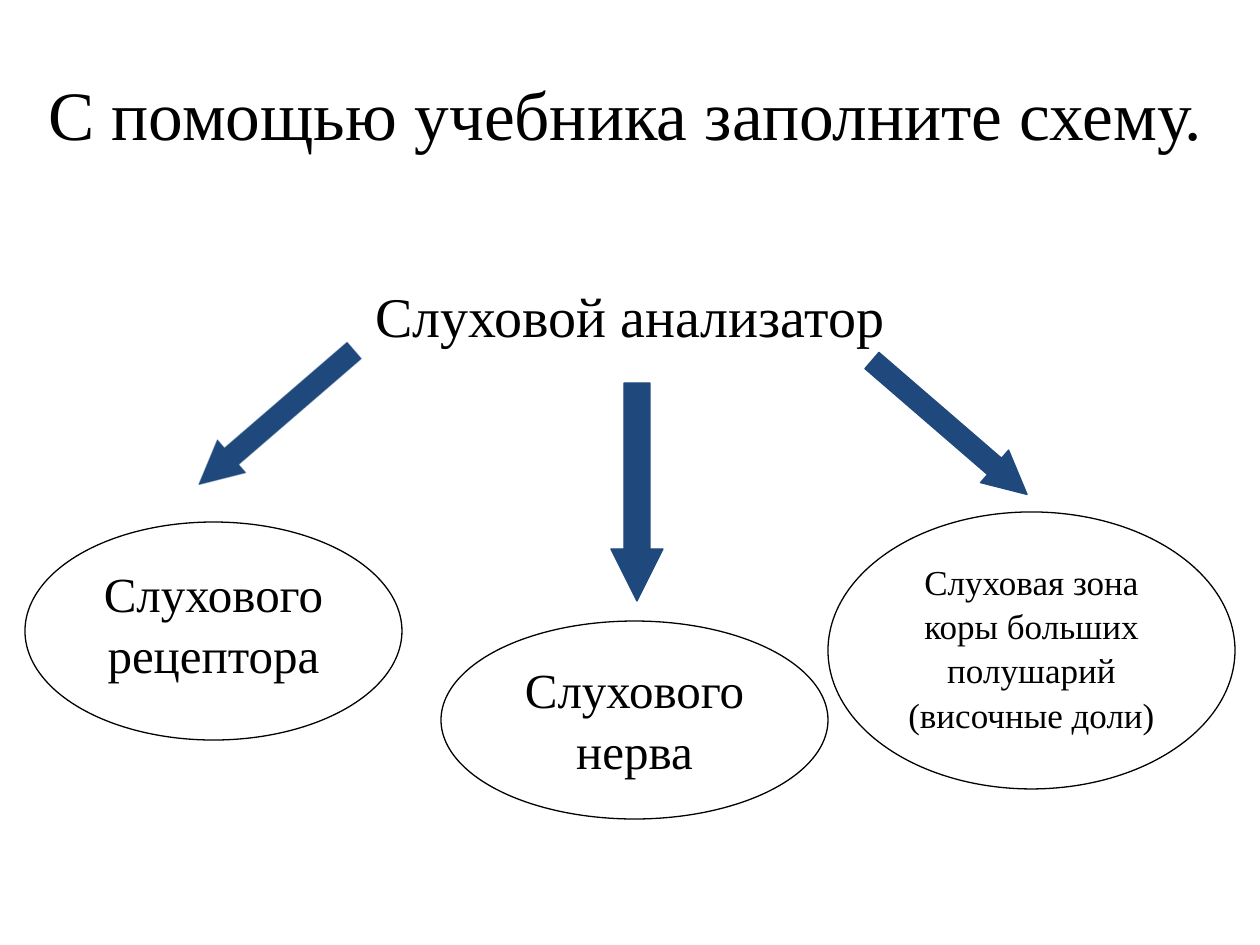
from typing import NamedTuple

from lxml import etree
from pptx import Presentation
from pptx.dml.color import RGBColor
from pptx.enum.shapes import MSO_SHAPE
from pptx.enum.text import MSO_ANCHOR, MSO_AUTO_SIZE, PP_ALIGN
from pptx.oxml.ns import qn
from pptx.util import Emu, Inches, Pt

PX_PER_INCH = 126
FONT = "Times New Roman"
BLACK = RGBColor(0x00, 0x00, 0x00)
WHITE = RGBColor(0xFF, 0xFF, 0xFF)
NAVY = RGBColor(0x1F, 0x49, 0x7D)
LEFT_ARROW, OVAL = MSO_SHAPE.LEFT_ARROW, MSO_SHAPE.OVAL
TOP, MIDDLE = MSO_ANCHOR.TOP, MSO_ANCHOR.MIDDLE
CENTER = PP_ALIGN.CENTER
NO_AUTOFIT = MSO_AUTO_SIZE.NONE


class Box(NamedTuple):
    left: int
    top: int
    width: int
    height: int


class Arrow(NamedTuple):
    box: Box
    rotation: float
    line_opacity: int = 100


class Part(NamedTuple):
    box: Box
    text: str
    size: int


ARROWS = [
    Arrow(Box(174, 396, 205, 43), 319.2, 50),
    Arrow(Box(528, 466, 218, 52), 270),
    Arrow(Box(847, 406, 205, 43), 220.8),
]
PARTS = [
    Part(Box(25, 522, 377, 218), "Слухового рецептора", 28),
    Part(Box(441, 621, 387, 198), "Слухового нерва", 28),
    Part(Box(828, 512, 407, 277),
         "Слуховая зона коры больших полушарий (височные доли)", 20),
]


def px(length: int) -> Emu:
    return Inches(length / PX_PER_INCH)


def write_text(shape, text: str, size: float, anchor):
    frame = shape.text_frame
    frame.word_wrap = True
    frame.auto_size = NO_AUTOFIT
    frame.vertical_anchor = anchor
    paragraph = frame.paragraphs[0]
    paragraph.alignment = CENTER
    paragraph.space_before = Pt(0)
    run = paragraph.add_run()
    run.text = text
    run.font.name = FONT
    run.font.size = Pt(size)
    run.font.color.rgb = BLACK
    return paragraph


def fill_placeholder(shape, box: Box, text: str, size: float, anchor):
    shape.left, shape.top, shape.width, shape.height = map(px, box)
    return write_text(shape, text, size, anchor)


def add_filled_shape(slide, kind, box: Box, fill: RGBColor, line: RGBColor):
    shape = slide.shapes.add_shape(kind, *map(px, box))
    shape.shadow.inherit = False
    shape.fill.solid()
    shape.fill.fore_color.rgb = fill
    shape.line.color.rgb = line
    shape.line.width = Pt(0.75)
    return shape


def add_arrow(slide, arrow: Arrow) -> None:
    shape = add_filled_shape(slide, LEFT_ARROW, arrow.box, NAVY, NAVY)
    shape.adjustments[0] = 0.5
    shape.adjustments[1] = 1
    shape.rotation = arrow.rotation
    if arrow.line_opacity < 100:
        color = shape.line.fill.fore_color
        color.rgb = NAVY
        line_color = shape.line._get_or_add_ln().find(".//" + qn("a:srgbClr"))
        etree.SubElement(line_color, qn("a:alpha"),
                         val=str(arrow.line_opacity * 1000))


def add_part(slide, part: Part) -> None:
    shape = add_filled_shape(slide, OVAL, part.box, WHITE, BLACK)
    paragraph = write_text(shape, part.text, part.size, TOP)
    paragraph.line_spacing = 1.05
    paragraph.space_after = Pt(10)


def remove_bullet(paragraph) -> None:
    properties = paragraph._p.get_or_add_pPr()
    properties.set("marL", "0")
    properties.set("indent", "0")
    etree.SubElement(properties, qn("a:buNone"))


def main() -> None:
    presentation = Presentation()
    presentation.slide_width = Inches(10)
    presentation.slide_height = Inches(7.5)
    slide = presentation.slides.add_slide(presentation.slide_layouts[1])

    title, body = slide.placeholders
    fill_placeholder(title, Box(25, 55, 1201, 189),
                     "С помощью учебника заполните схему.", 39.6, MIDDLE)
    title.text_frame.margin_bottom = px(79)
    heading = fill_placeholder(body, Box(0, 275, 1260, 570),
                               "Слуховой анализатор", 32, TOP)
    remove_bullet(heading)

    for arrow in ARROWS:
        add_arrow(slide, arrow)
    for part in PARTS:
        add_part(slide, part)
    presentation.save("out.pptx")


if __name__ == "__main__":
    main()
